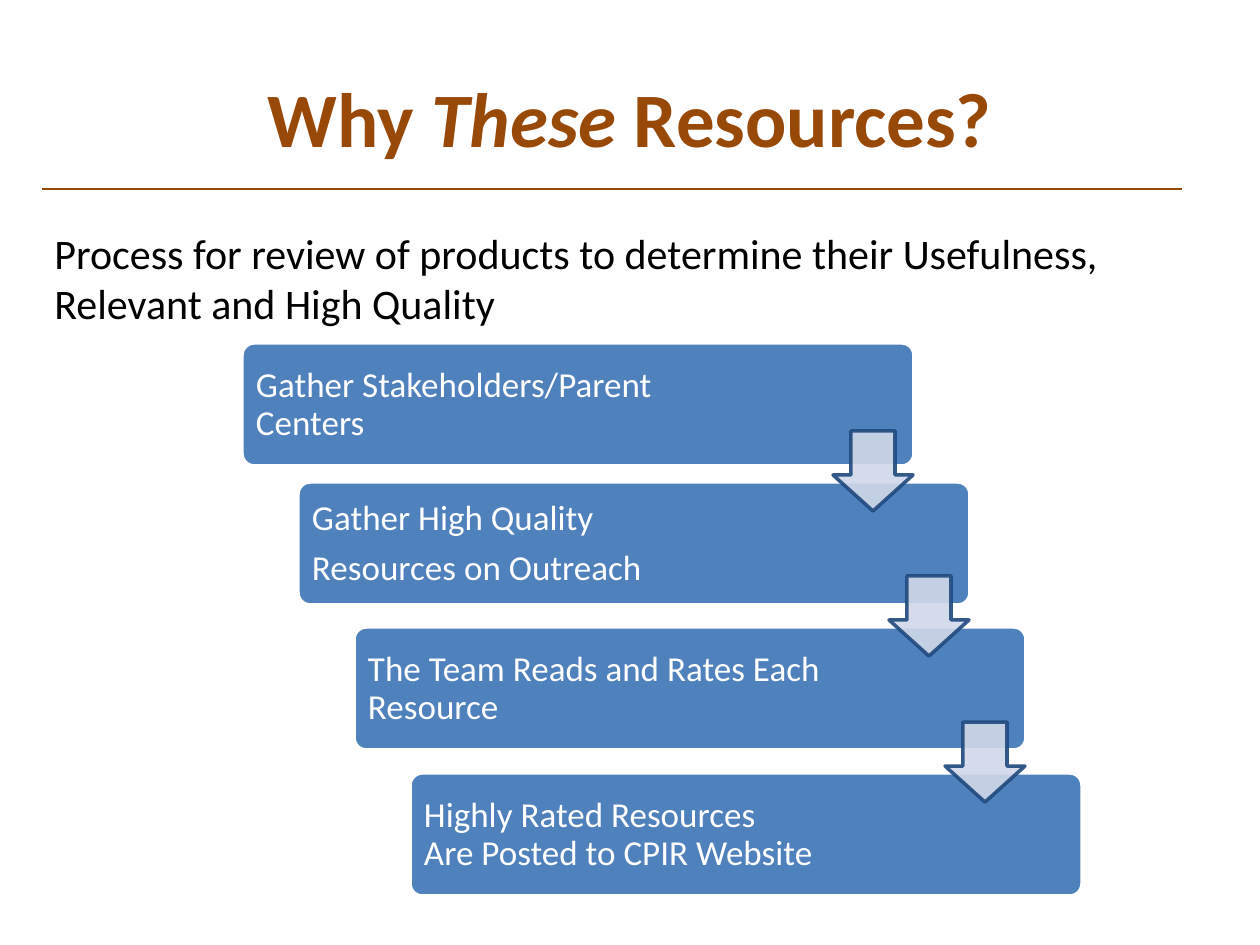
"""Build the "Why These Resources?" slide with its four-step review process."""
from lxml import etree
from pptx import Presentation
from pptx.dml.color import RGBColor
from pptx.enum.shapes import MSO_CONNECTOR, MSO_SHAPE as SHAPE
from pptx.enum.text import MSO_ANCHOR as ANCHOR, PP_ALIGN as ALIGN
from pptx.oxml.ns import qn
from pptx.util import Emu, Pt

COLORS = {"brown": "984807", "black": "000000", "white": "FFFFFF",
          "blue": "4F81BD", "pale": "D0D8E8", "navy": "1F497D"}
STEPS = [
    (343, ["Gather Stakeholders/Parent Centers"]),
    (482, ["Gather High Quality", "Resources on Outreach"]),
    (627, ["The Team Reads and Rates Each Resource"]),
    (773, ["Highly Rated Resources\vAre Posted to CPIR Website"]),
]
STEP_X, STEP_SHIFT = 242, 56


def px(*values):
    return [Emu(round(v * 914400 / 126)) for v in values]


def style(font, size, color):
    font.name, font.size = "Calibri", Pt(size)
    font.color.rgb = RGBColor.from_string(COLORS[color])


prs = Presentation()
prs.slide_width, prs.slide_height = px(1260, 945)
s = prs.slides.add_slide(prs.slide_layouts[5])

title = s.shapes.title
title.left, title.top, title.width, title.height = px(63, 38, 1134, 157)
title.text_frame.vertical_anchor = ANCHOR.MIDDLE
p = title.text_frame.paragraphs[0]
p.alignment = ALIGN.CENTER
for text in ("Why ", "These", " Resources?"):
    r = p.add_run()
    r.text = text
    style(r.font, 44, "brown")
    r.font.bold, r.font.italic = True, text == "These"

rule = s.shapes.add_connector(MSO_CONNECTOR.STRAIGHT, *px(42, 189, 1182, 189))
rule.line.color.rgb = RGBColor.from_string(COLORS["brown"])
rule.line.width = Pt(1.5)
etree.SubElement(rule._element.spPr, qn("a:effectLst"))

intro = s.shapes.add_textbox(*px(42, 221, 1176, 165))
tf = intro.text_frame
tf.word_wrap = True
tf.text = ("Process for review of products to determine their Usefulness, "
           "Relevant and High Quality")
style(tf.paragraphs[0].runs[0].font, 24, "black")

for i, (y, lines) in enumerate(STEPS):
    x = STEP_X + i * STEP_SHIFT
    box = s.shapes.add_shape(SHAPE.ROUNDED_RECTANGLE, *px(x, y, 672, 123))
    box.adjustments[0] = 0.1
    box.shadow.inherit = False
    box.fill.solid()
    box.fill.fore_color.rgb = RGBColor.from_string(COLORS["blue"])
    box.line.color.rgb = RGBColor.from_string(COLORS["white"])
    box.line.width = Pt(2)

    label = s.shapes.add_textbox(*px(x + 4, y + 4, 529, 116))
    tf = label.text_frame
    tf.word_wrap = True
    tf.vertical_anchor = ANCHOR.MIDDLE
    tf.margin_left, tf.margin_top, tf.margin_right, tf.margin_bottom = px(10, 10, 10, 10)
    tf.text = "\n".join(lines)
    for p in tf.paragraphs:
        p.line_spacing, p.space_after = 0.9, Pt(7)
        for r in p.runs:
            style(r.font, 20, "white")

for i, (y, _) in enumerate(STEPS[1:]):
    x = STEP_X + i * STEP_SHIFT + 591
    arrow = s.shapes.add_shape(SHAPE.DOWN_ARROW, *px(x, y - 51, 80, 80))
    arrow.adjustments[0], arrow.adjustments[1] = 0.55, 0.45
    arrow.shadow.inherit = False
    arrow.fill.solid()
    arrow.fill.fore_color.rgb = RGBColor.from_string(COLORS["pale"])
    arrow.line.color.rgb = RGBColor.from_string(COLORS["navy"])
    arrow.line.width = Pt(2)
    for color in arrow._element.spPr.iter(qn("a:srgbClr")):
        etree.SubElement(color, qn("a:alpha"), val="90000")

prs.save("out.pptx")
